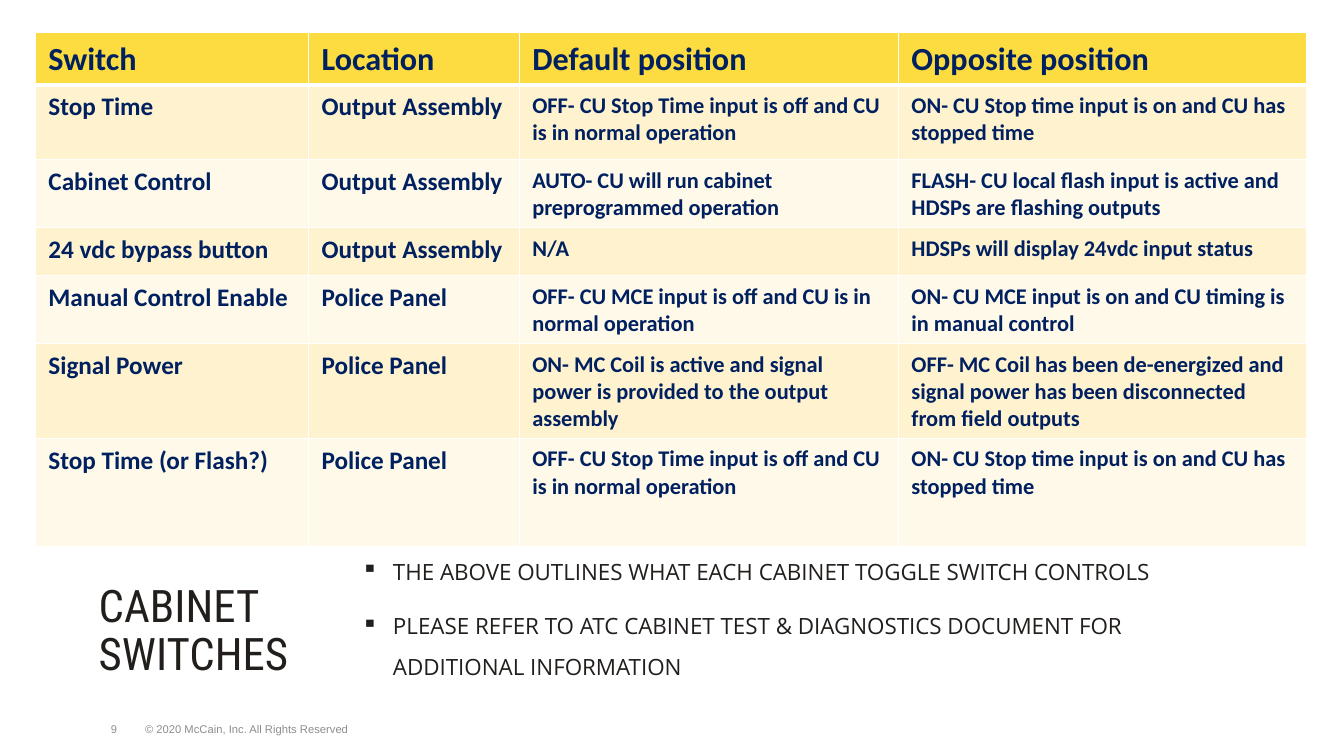
from dataclasses import dataclass

from lxml.etree import SubElement
from pptx import Presentation
from pptx.dml.color import RGBColor
from pptx.enum.text import MSO_ANCHOR as Anchor, PP_ALIGN as Align
from pptx.oxml.ns import qn
from pptx.util import Inches, Pt


@dataclass(frozen=True)
class Theme:
    head_fill: str = "FCDC41"
    bands: tuple = ("FEF2CF", "FEF9E8")
    rule: str = "FFFFFF"
    navy: str = "002060"
    ink: str = "211E1C"
    grey: str = "8D8D8D"
    table_font: str = "Calibri"
    title_font: str = "Roboto Condensed"
    body_font: str = "Open Sans"
    footer_font: str = "Arial"
    head_size: float = 23
    column_sizes: tuple = (18, 18, 16, 16)
    title_size: float = 32
    body_size: float = 16
    footer_size: float = 8
    thin: float = 0.84
    thick: float = 2.5


T = Theme()
SLIDE_W, SLIDE_H = Inches(13.33), Inches(7.5)

# Column widths and row heights, in percent of the slide
COLUMNS = (20.33, 15.68, 28.21, 30.38)
ROWS = (6.9, 9.9, 9, 6.35, 9, 12.45, 14.25)

STOP_TIME = ("OFF- CU Stop Time input is off and CU is in normal operation",
             "ON- CU Stop time input is on and CU has stopped time")
SWITCHES = (
    ("Switch", "Location", "Default position", "Opposite position"),
    ("Stop Time", "Output Assembly", *STOP_TIME),
    ("Cabinet Control", "Output Assembly",
     "AUTO- CU will run cabinet preprogrammed operation",
     "FLASH- CU local flash input is active and HDSPs are flashing outputs"),
    ("24 vdc bypass button", "Output Assembly", "N/A",
     "HDSPs will display 24vdc input status"),
    ("Manual Control Enable", "Police Panel",
     "OFF- CU MCE input is off and CU is in normal operation",
     "ON- CU MCE input is on and CU timing is in manual control"),
    ("Signal Power", "Police Panel",
     "ON- MC Coil is active and signal power is provided to the output assembly",
     "OFF- MC Coil has been de-energized and signal power has been "
     "disconnected from field outputs"),
    ("Stop Time (or Flash?)", "Police Panel", *STOP_TIME),
)
NOTES = (
    "THE ABOVE OUTLINES WHAT EACH CABINET TOGGLE SWITCH CONTROLS",
    "PLEASE REFER TO ATC CABINET TEST & DIAGNOSTICS DOCUMENT FOR "
    "ADDITIONAL INFORMATION",
)


def across(percent):
    return round(SLIDE_W * percent / 100)


def down(percent):
    return round(SLIDE_H * percent / 100)


def add_bullet(p, char):
    pPr = p._p.get_or_add_pPr()
    pPr.set("marL", str(Inches(0.31)))
    pPr.set("indent", str(-Inches(0.31)))
    SubElement(pPr, qn("a:buChar"), char=char)


def write(tf, *texts, font, size, color, bold=False, align=Align.LEFT,
          spacing=None, gap=0, bullet=None):
    """Put one paragraph per text into a text frame."""
    tf.word_wrap = True
    for i, text in enumerate(texts):
        p = tf.paragraphs[0] if i == 0 else tf.add_paragraph()
        if bullet:
            add_bullet(p, bullet)
        p.alignment = align
        if spacing:
            p.line_spacing = spacing
        if i:
            p.space_before = Pt(gap)
        r = p.add_run()
        r.text = text
        r.font.name, r.font.size, r.font.bold = font, Pt(size), bold
        r.font.color.rgb = RGBColor.from_string(color)


def add_text(slide, x, y, w, h, *texts, anchor=Anchor.BOTTOM, **fmt):
    sp = slide.shapes.add_textbox(across(x), down(y), across(w), down(h))
    sp.text_frame.vertical_anchor = anchor
    write(sp.text_frame, *texts, **fmt)


def add_borders(cell, **widths):
    """Draw the cell's sides; the lines come before the fill in tcPr."""
    tcPr = cell._tc.get_or_add_tcPr()
    for side in ("L", "R", "T", "B"):
        width = Pt(widths.get(side, T.thin))
        ln = SubElement(tcPr, qn(f"a:ln{side}"), w=str(width))
        fill = SubElement(ln, qn("a:solidFill"))
        SubElement(fill, qn("a:srgbClr"), val=T.rule)


def add_switch_table(slide, x, y):
    frame = slide.shapes.add_table(
        len(ROWS), len(COLUMNS), across(x), down(y),
        across(sum(COLUMNS)), down(sum(ROWS)))
    table = frame.table
    for column, width in zip(table.columns, COLUMNS):
        column.width = across(width)
    for i, (row, height) in enumerate(zip(table.rows, ROWS)):
        row.height = down(height)
        edges = {0: {"B": T.thick}, 1: {"T": T.thick}}.get(i, {})
        for cell, text, size in zip(row.cells, SWITCHES[i], T.column_sizes):
            cell.margin_left = cell.margin_right = Inches(0.13)
            cell.margin_top = cell.margin_bottom = Inches(0.07)
            add_borders(cell, **edges)
            cell.fill.solid()
            cell.fill.fore_color.rgb = RGBColor.from_string(
                T.bands[(i - 1) % 2] if i else T.head_fill)
            write(cell.text_frame, text, font=T.table_font,
                  size=size if i else T.head_size, color=T.navy, bold=True)


def main():
    prs = Presentation()
    prs.slide_width, prs.slide_height = SLIDE_W, SLIDE_H
    slide = prs.slides.add_slide(prs.slide_layouts[6])

    # Footer
    footer = dict(font=T.footer_font, size=T.footer_size, color=T.grey)
    add_text(slide, 10.05, 92.67, 27.31, 5.33,
             "© 2020 McCain, Inc. All Rights Reserved", **footer)
    add_text(slide, 6.9, 92.67, 3.15, 5.33, "9", align=Align.CENTER, **footer)

    # Title and notes
    add_text(slide, 6.6, 69.47, 24.08, 21.2, "CABINET SWITCHES",
             font=T.title_font, size=T.title_size, color=T.ink, spacing=0.9)
    add_text(slide, 26.18, 71.33, 67.14, 19.33, *NOTES, anchor=Anchor.MIDDLE,
             font=T.body_font, size=T.body_size, color=T.ink,
             spacing=1.5, gap=10, bullet="▪")

    # Switch table
    add_switch_table(slide, 2.63, 4.27)

    prs.save("out.pptx")


if __name__ == "__main__":
    main()
